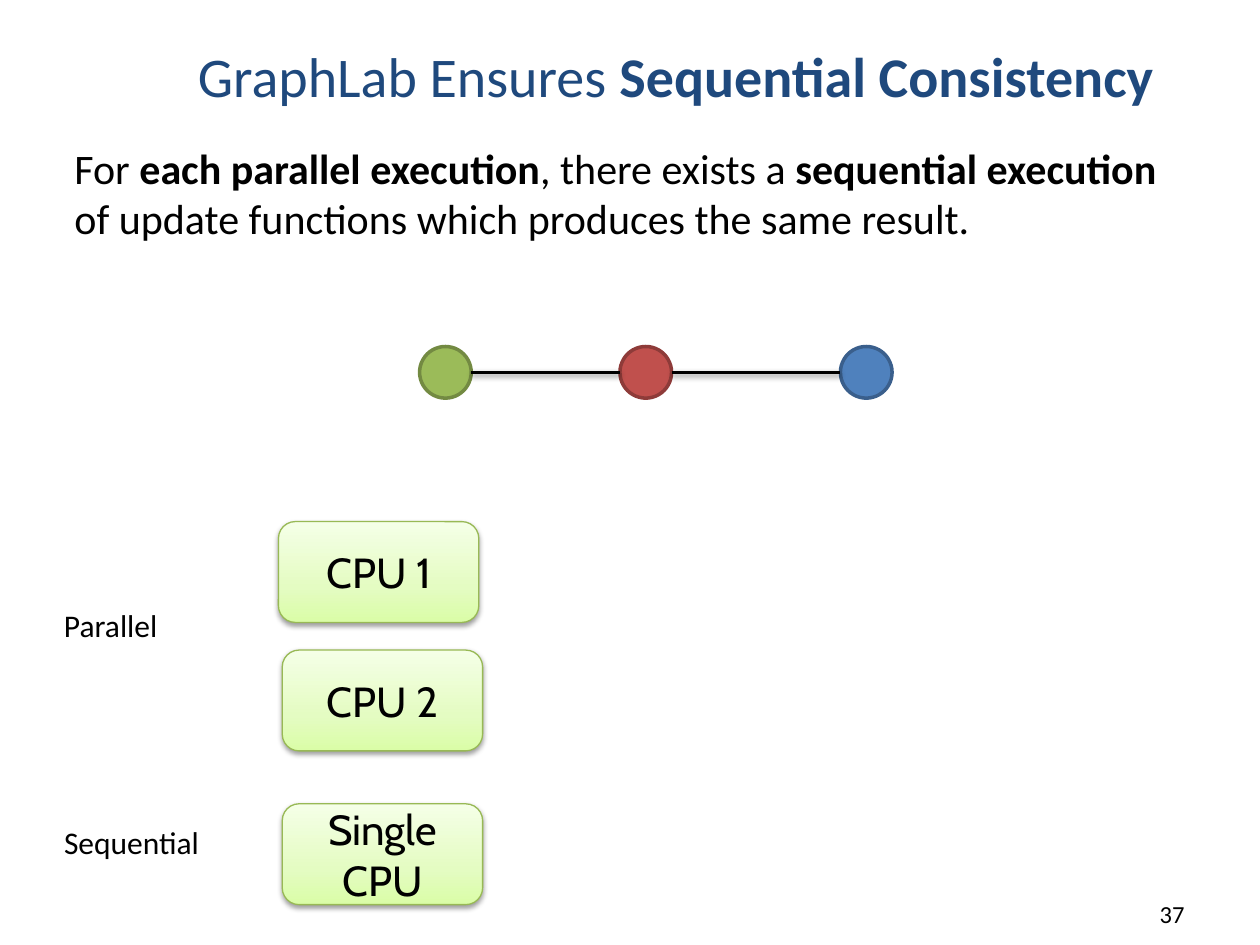
from dataclasses import dataclass
from itertools import pairwise

from pptx import Presentation
from pptx import util as u
from pptx.dml.color import RGBColor
from pptx.enum import shapes, text
from pptx.oxml import parse_xml
from pptx.oxml.ns import nsdecls, qn


@dataclass(frozen=True)
class Theme:
    font: str = "Calibri"
    label: str = "Cabin"
    ink: str = "000000"
    head: str = "1F497D"
    edge: str = "98B955"
    grad: tuple = ((0, "DAFDA7"), (35, "E4FCC2"), (100, "F5FFE7"))
    title: int = 32
    body: int = 24
    side: int = 18
    note: int = 14


@dataclass(frozen=True)
class Node:
    left: float
    fill: str
    edge: str


@dataclass(frozen=True)
class Cpu:
    left: float
    top: float
    lines: tuple


@dataclass(frozen=True)
class Label:
    words: str
    box: tuple
    size: int
    align: text.PP_ALIGN = text.PP_ALIGN.LEFT
    anchor: text.MSO_ANCHOR = text.MSO_ANCHOR.TOP


THEME = Theme()
NODE_TOP, NODE_SIZE = 2.75, 0.41
NODES = (
    Node(3.33, "9BBB59", "738A42"),
    Node(4.92, "C0504D", "8E3B39"),
    Node(6.67, "4F81BD", "3A5F8C"),
)
CPUS = (
    Cpu(2.21, 4.14, ("CPU 1",)),
    Cpu(2.24, 5.16, ("CPU 2",)),
    Cpu(2.24, 6.38, ("Single", "CPU")),
)
LABELS = (
    Label("Parallel", (0.41, 4.76, 1.26, 0.5), THEME.side),
    Label("Sequential", (0.41, 6.48, 1.75, 0.5), THEME.side),
    Label("37", (7.42, 6.92, 2.08, 0.5), THEME.note,
          text.PP_ALIGN.RIGHT, text.MSO_ANCHOR.BOTTOM),
)


def rgb(code: str) -> RGBColor:
    return RGBColor.from_string(code)


def style(run, size: int, color: str = THEME.ink, face: str = THEME.font,
          bold: bool = False) -> None:
    font = run.font
    font.name, font.size, font.bold = face, u.Pt(size), bold
    font.color.rgb = rgb(color)


def place(shape, box: tuple) -> None:
    shape.left, shape.top, shape.width, shape.height = map(u.Inches, box)


def shade(shape) -> None:
    """Give a shape or connector a soft shadow below it."""
    shape._element.spPr.append(parse_xml(
        f'<a:effectLst {nsdecls("a")}><a:outerShdw blurRad="{u.Pt(3.1)}" '
        f'dist="{u.Pt(1.6)}" dir="5400000" rotWithShape="0">'
        '<a:srgbClr val="000000"><a:alpha val="38000"/></a:srgbClr>'
        '</a:outerShdw></a:effectLst>'))


def fill_holder(holder, box: tuple, parts: tuple, size: int, color: str,
                anchor: text.MSO_ANCHOR) -> None:
    """Fill a placeholder with (words, bold) parts."""
    place(holder, box)
    frame = holder.text_frame
    frame.auto_size = text.MSO_AUTO_SIZE.NONE
    frame.vertical_anchor = anchor
    para = frame.paragraphs[0]
    props = para._p.get_or_add_pPr()
    props.set("marL", "0")
    props.set("indent", "0")
    props.append(parse_xml(f'<a:buNone {nsdecls("a")}/>'))
    para.alignment = text.PP_ALIGN.LEFT
    para.space_before = u.Pt(0)
    for words, bold in parts:
        run = para.add_run()
        run.text = words
        style(run, size, color, bold=bold)


def add_label(slide, label: Label) -> None:
    box = slide.shapes.add_textbox(*map(u.Inches, label.box))
    frame = box.text_frame
    frame.word_wrap = True
    frame.vertical_anchor = label.anchor
    frame.text = label.words
    para = frame.paragraphs[0]
    para.alignment = label.align
    style(para.runs[0], label.size)


def add_cpu(slide, cpu: Cpu) -> None:
    shape = slide.shapes.add_shape(
        shapes.MSO_SHAPE.ROUNDED_RECTANGLE,
        *map(u.Inches, (cpu.left, cpu.top, 1.59, 0.8)))
    shape.fill.gradient()
    shape.fill.gradient_angle = 90
    stops = shape._element.spPr.find(".//" + qn("a:gsLst"))
    stops.clear()
    for pos, color in THEME.grad:
        stops.append(parse_xml(
            f'<a:gs {nsdecls("a")} pos="{pos * 1000}">'
            f'<a:srgbClr val="{color}"/></a:gs>'))
    shape.line.color.rgb = rgb(THEME.edge)
    shape.line.width = u.Pt(0.75)
    shade(shape)
    frame = shape.text_frame
    frame.word_wrap = False
    frame.vertical_anchor = text.MSO_ANCHOR.MIDDLE
    frame.text = "\n".join(cpu.lines)
    for para in frame.paragraphs:
        para.alignment = text.PP_ALIGN.CENTER
        style(para.runs[0], THEME.body, face=THEME.label)


def add_node(slide, node: Node) -> None:
    shape = slide.shapes.add_shape(
        shapes.MSO_SHAPE.OVAL,
        *map(u.Inches, (node.left, NODE_TOP, NODE_SIZE, NODE_SIZE)))
    shape.shadow.inherit = False
    shape.fill.solid()
    shape.fill.fore_color.rgb = rgb(node.fill)
    shape.line.color.rgb = rgb(node.edge)
    shape.line.width = u.Pt(2)


def add_link(slide, start: Node, end: Node) -> None:
    """Join the right side of one node to the left side of the next."""
    mid = NODE_TOP + NODE_SIZE / 2
    link = slide.shapes.add_connector(
        shapes.MSO_CONNECTOR.STRAIGHT,
        *map(u.Inches, (start.left + NODE_SIZE, mid, end.left, mid)))
    link.line.color.rgb = rgb(THEME.ink)
    link.line.width = u.Pt(2)
    shade(link)


def main() -> None:
    deck = Presentation()
    deck.slide_width, deck.slide_height = u.Inches(10), u.Inches(7.5)
    slide = deck.slides.add_slide(deck.slide_layouts[1])

    # Title and statement
    fill_holder(slide.shapes.title, (1.47, 0.08, 8.2, 0.83),
                (("GraphLab Ensures ", False), ("Sequential Consistency", True)),
                THEME.title, THEME.head, text.MSO_ANCHOR.BOTTOM)
    fill_holder(slide.placeholders[1], (0.49, 1.08, 9, 0.91),
                (("For ", False), ("each parallel execution", True),
                 (", there exists a ", False), ("sequential execution ", True),
                 ("of update functions which produces the same result.", False)),
                THEME.body, THEME.ink, text.MSO_ANCHOR.TOP)

    # Processors and side labels
    for cpu in CPUS:
        add_cpu(slide, cpu)
    for label in LABELS:
        add_label(slide, label)

    # Chain of data nodes
    for node in NODES:
        add_node(slide, node)
    for start, end in pairwise(NODES):
        add_link(slide, start, end)

    deck.save("out.pptx")


if __name__ == "__main__":
    main()
